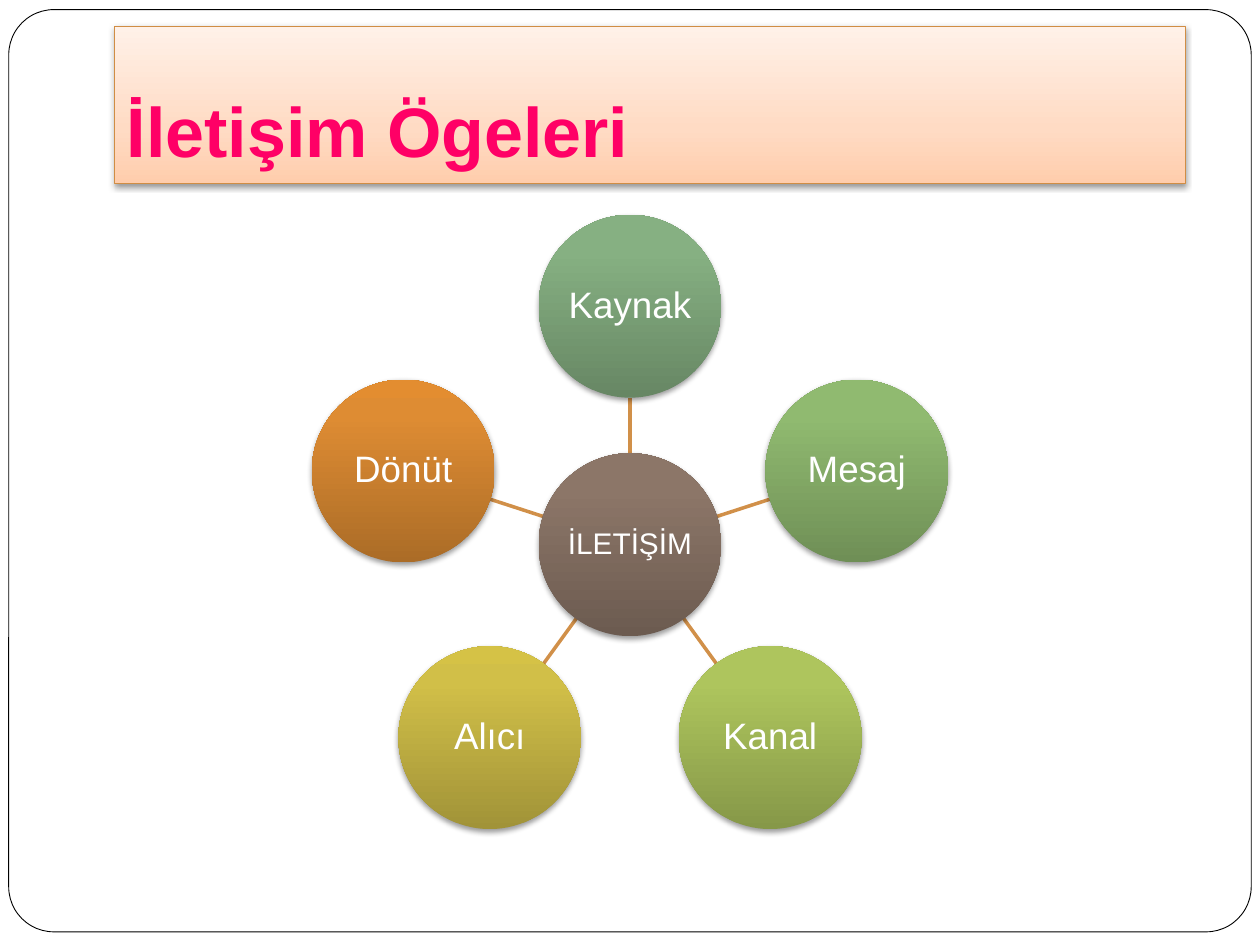
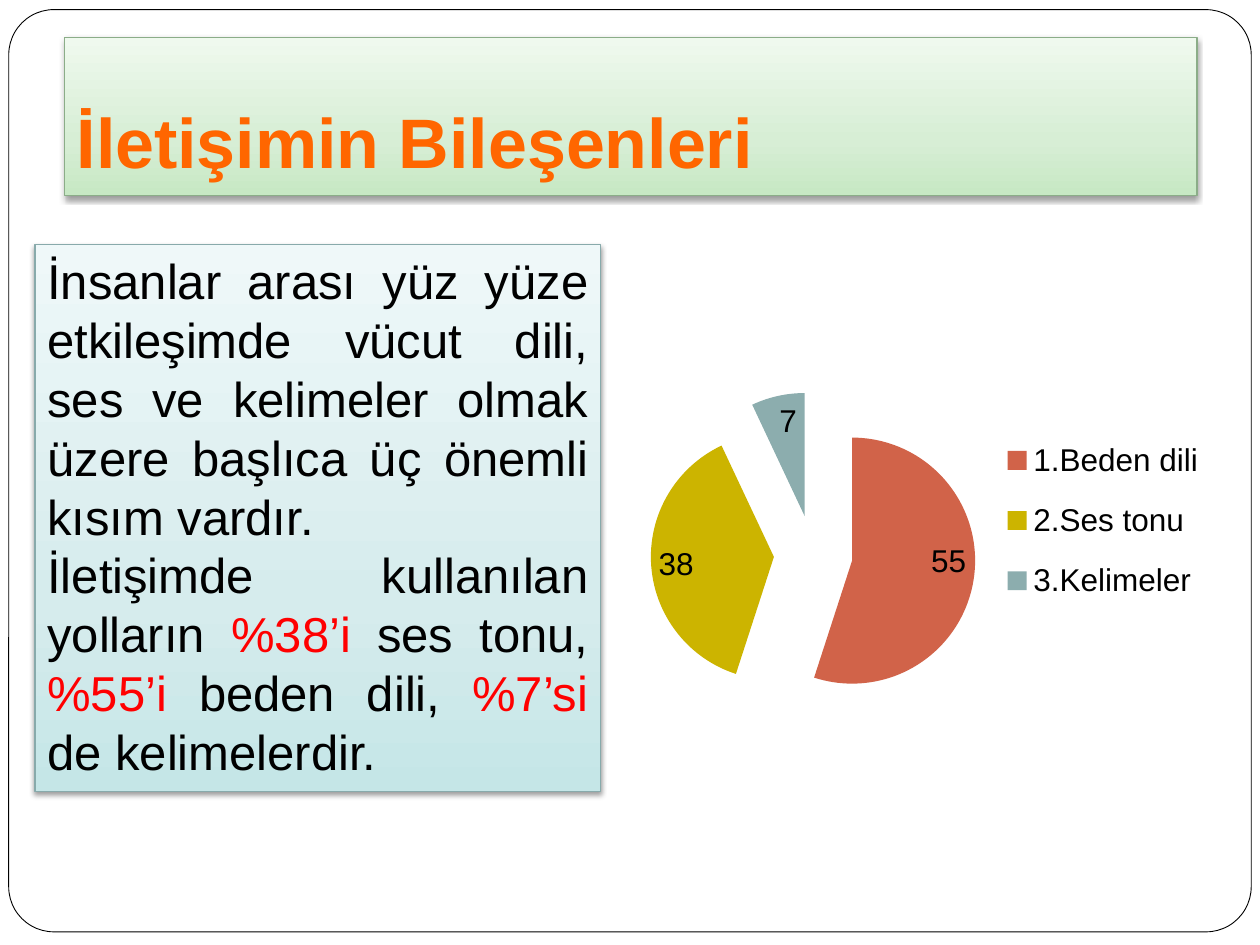
"""Build two slides on the elements and components of communication."""
from copy import deepcopy
from math import cos, radians, sin

from lxml import etree
from pptx import Presentation
from pptx.chart.data import CategoryChartData
from pptx.dml.color import RGBColor
from pptx.enum.chart import XL_CHART_TYPE, XL_LABEL_POSITION, XL_LEGEND_POSITION
from pptx.enum.shapes import MSO_CONNECTOR, MSO_SHAPE
from pptx.enum.text import MSO_ANCHOR, PP_ALIGN
from pptx.oxml import parse_xml
from pptx.oxml.ns import nsdecls, qn
from pptx.util import Pt

RECT, OVAL, ROUNDED = MSO_SHAPE.RECTANGLE, MSO_SHAPE.OVAL, MSO_SHAPE.ROUNDED_RECTANGLE
STRAIGHT = MSO_CONNECTOR.STRAIGHT
TOP, MIDDLE, BOTTOM = MSO_ANCHOR.TOP, MSO_ANCHOR.MIDDLE, MSO_ANCHOR.BOTTOM
LEFT, CENTER, JUSTIFY = PP_ALIGN.LEFT, PP_ALIGN.CENTER, PP_ALIGN.JUSTIFY
PIE, INSIDE_END = XL_CHART_TYPE.PIE, XL_LABEL_POSITION.INSIDE_END
LEGEND_RIGHT = XL_LEGEND_POSITION.RIGHT

FONT = "Arial"
COLORS = {
    "white": "FFFFFF", "black": "000000", "red": "FF0000",
    "pink": "FF0066", "orange": "FF6600", "spoke": "D19049",
    "peach_line": "D08D44", "green_line": "8BAD88", "teal_line": "88AAAB",
}
PANEL_STOPS = (0, 0.35, 1)
CIRCLE_STOPS = (0, 0.8, 1)
GRADIENTS = {
    "peach": ("FFCDAC", "FFDBC4", "FFF1E8"),
    "green": ("C7E8C4", "D7EED5", "EFF9EE"),
    "teal": ("C5E6E7", "D6ECED", "EFF8F9"),
}


def add_gradient_shape(s, kind, box, colors, stops, line=None):
    """Add a shape with a bottom-to-top gradient and a soft shadow."""
    sp = s.shapes.add_shape(kind, *[Pt(v) for v in box])
    sp.fill.gradient()
    sp.fill.gradient_angle = 90
    stop_list = sp._element.spPr.find(".//" + qn("a:gsLst"))
    stop_list.append(deepcopy(stop_list[-1]))
    for stop, color, position in zip(sp.fill.gradient_stops, colors, stops):
        stop.color.rgb = RGBColor.from_string(color)
        stop.position = position
    if line:
        sp.line.color.rgb = RGBColor.from_string(COLORS[line])
        sp.line.width = Pt(0.75)
    else:
        sp.line.fill.background()
    sp.shadow.inherit = False
    sp._element.spPr.find(qn("a:effectLst")).append(parse_xml(
        f'<a:outerShdw {nsdecls("a")} blurRad="39400" dist="20300" dir="5400000" rotWithShape="0">'
        '<a:srgbClr val="000000"><a:alpha val="38000"/></a:srgbClr></a:outerShdw>'))
    return sp


def write(sp, paragraphs, size, align, anchor, bold=False):
    """Fill a shape with paragraphs, each a list of (text, color) runs."""
    tf = sp.text_frame
    tf.word_wrap = True
    tf.vertical_anchor = anchor
    for i, runs in enumerate(paragraphs):
        p = tf.add_paragraph() if i else tf.paragraphs[0]
        p.alignment = align
        for text, color in runs:
            r = p.add_run()
            r.text = text
            r.font.name = FONT
            r.font.size = Pt(size)
            r.font.bold = bold
            r.font.color.rgb = RGBColor.from_string(COLORS[color])


prs = Presentation()
prs.slide_width, prs.slide_height = Pt(720), Pt(540)

titles = [
    ("İletişim Ögeleri", "pink", (65.5, 15, 612, 90), "peach", "peach_line"),
    ("İletişimin Bileşenleri", "orange", (36.75, 21.6, 647.25, 90), "green", "green_line"),
]
for title, color, box, gradient, line in titles:
    s = prs.slides.add_slide(prs.slide_layouts[6])
    frame = s.shapes.add_shape(ROUNDED, Pt(5), Pt(5.5), Pt(710), Pt(527))
    frame.adjustments[0] = 0.049
    frame.fill.solid()
    frame.fill.fore_color.rgb = RGBColor.from_string(COLORS["white"])
    frame.line.color.rgb = RGBColor.from_string(COLORS["black"])
    frame.line.width = Pt(0.5)
    frame.shadow.inherit = False
    band = add_gradient_shape(s, RECT, box, GRADIENTS[gradient], PANEL_STOPS, line)
    write(band, [[(title, color)]], 40, LEFT, BOTTOM, bold=True)
    band.text_frame.margin_bottom = Pt(7.2)

elements_slide, components_slide = prs.slides

center_x, center_y = 360, 311.25
diameter, orbit = 104.5, 136.25
elements = [
    ("Kaynak", ("678764", "86B082", "86B182")),
    ("Mesaj", ("6F8F56", "90BA70", "90BC6F")),
    ("Kanal", ("869848", "AEC55D", "B0C85B")),
    ("Alıcı", ("A19338", "D1BF48", "D5C246")),
    ("Dönüt", ("AB6C27", "DE8C33", "E38D30")),
]
circles = [("İLETİŞİM", ("6C5B50", "8C7668", "8D7768"), 17, center_x, center_y)]
for i, (name, colors) in enumerate(elements):
    angle = radians(360 / len(elements) * i - 90)
    dx, dy = cos(angle), sin(angle)
    circles.append((name, colors, 21, center_x + orbit * dx, center_y + orbit * dy))
    near, far = diameter / 2, orbit - diameter / 2
    spoke = elements_slide.shapes.add_connector(
        STRAIGHT, Pt(center_x + near * dx), Pt(center_y + near * dy),
        Pt(center_x + far * dx), Pt(center_y + far * dy))
    spoke.line.color.rgb = RGBColor.from_string(COLORS["spoke"])
    spoke.line.width = Pt(2)
    etree.SubElement(spoke._element.spPr, qn("a:effectLst"))

for name, colors, size, x, y in circles:
    box = (x - diameter / 2, y - diameter / 2, diameter, diameter)
    circle = add_gradient_shape(elements_slide, OVAL, box, colors, CIRCLE_STOPS)
    write(circle, [[(name, "white")]], size, CENTER, MIDDLE)
    tf = circle.text_frame
    tf.word_wrap = False
    tf.margin_left = tf.margin_right = tf.margin_top = tf.margin_bottom = Pt(0.75)
    tf.paragraphs[0].line_spacing = 0.9

data = CategoryChartData()
data.categories = ["1.Beden dili", "2.Ses tonu", "3.Kelimeler"]
data.add_series("Series 1", (55, 38, 7))
chart = components_slide.shapes.add_chart(
    PIE, Pt(360), Pt(145.5), Pt(340), Pt(301), data).chart
chart.has_title = False
chart.font.name = FONT
chart.font.size = Pt(18)
chart.font.color.rgb = RGBColor.from_string(COLORS["black"])
chart.has_legend = True
chart.legend.position = LEGEND_RIGHT
chart.legend.include_in_layout = False
plot = chart.plots[0]
plot.vary_by_categories = True
plot.has_data_labels = True
plot.data_labels.show_value = True
plot.data_labels.show_percentage = False
plot.data_labels.position = INSIDE_END
series = plot.series[0]
series._element.find(qn("c:tx")).addnext(
    parse_xml(f'<c:explosion {nsdecls("c")} val="32"/>'))
for i, color in enumerate(("D16349", "CCB400", "8CADAE")):
    fill = series.points[i].format.fill
    fill.solid()
    fill.fore_color.rgb = RGBColor.from_string(color)

plot_area = chart._chartSpace.find(".//" + qn("c:plotArea"))
legend = chart.legend._element
layouts = [
    (plot_area, '<c:layoutTarget val="inner"/>', (0.035, 0.261, 0.546, 0.617)),
    (legend, "", (0.6, 0.31, 0.39, 0.39)),
]
for parent, target, values in layouts:
    for old in parent.findall(qn("c:layout")):
        parent.remove(old)
    sizes = "".join(f'<c:{k} val="{v}"/>' for k, v in zip("xywh", values))
    layout = parse_xml(
        f'<c:layout {nsdecls("c")}><c:manualLayout>{target}<c:xMode val="edge"/>'
        f'<c:yMode val="edge"/>{sizes}</c:manualLayout></c:layout>')
    if parent is legend:
        legend.find(qn("c:legendPos")).addnext(layout)
    else:
        plot_area.insert(0, layout)

explanation = [
    [("İnsanlar arası yüz yüze etkileşimde vücut dili, ses ve kelimeler olmak "
      "üzere başlıca üç önemli kısım vardır.", "black")],
    [("İletişimde kullanılan yolların ", "black"), ("%38’i", "red"),
     (" ses tonu, ", "black"), ("%55’i ", "red"), ("beden dili, ", "black"),
     ("%7’si ", "red"), ("de kelimelerdir.", "black")],
]
panel = add_gradient_shape(
    components_slide, RECT, (20, 139.75, 323.25, 312.5), GRADIENTS["teal"], PANEL_STOPS, "teal_line")
write(panel, explanation, 28, JUSTIFY, TOP)

prs.save("out.pptx")
